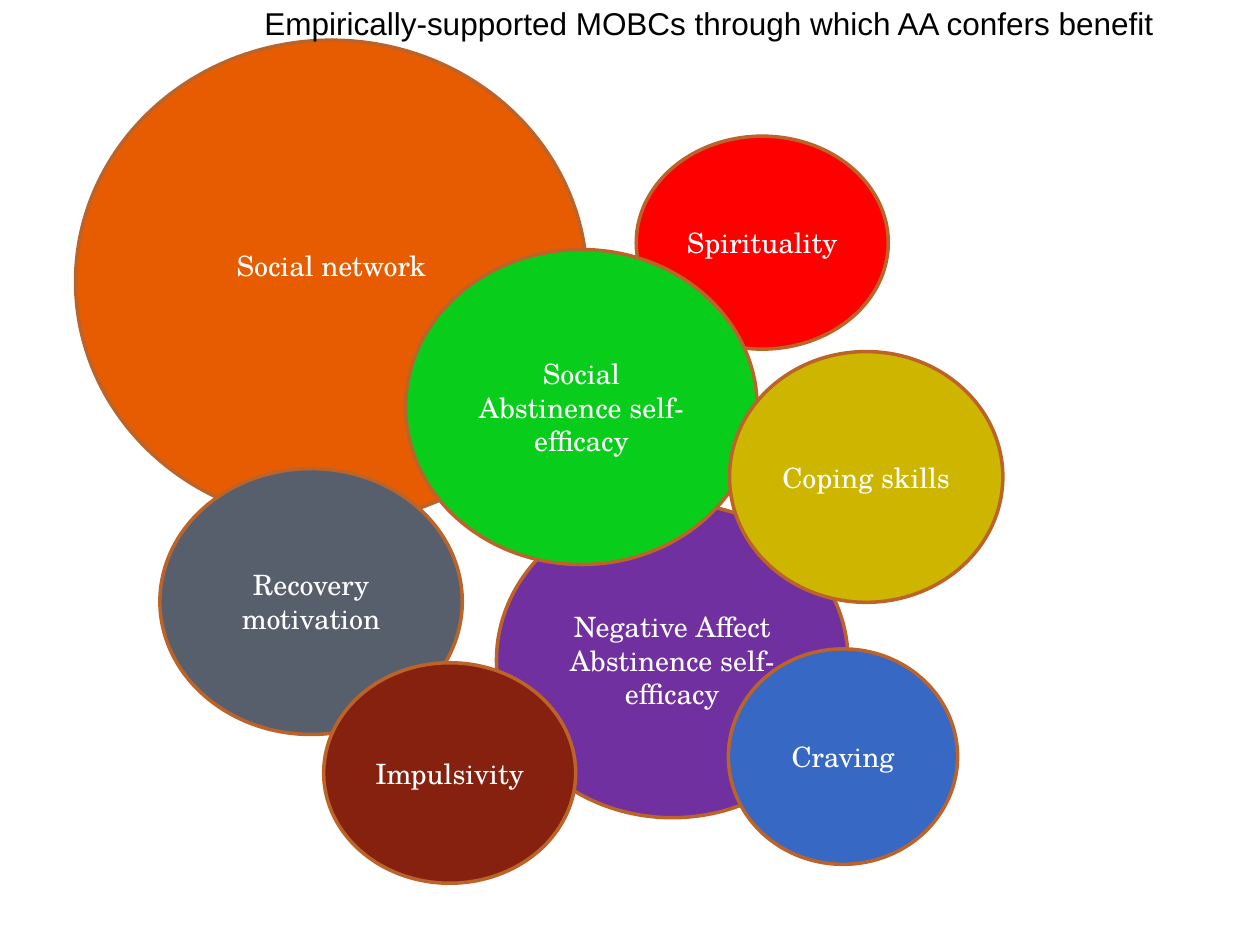
from pptx import Presentation
from pptx.dml.color import RGBColor
from pptx.enum.shapes import MSO_SHAPE as Shape
from pptx.enum.text import MSO_ANCHOR as Anchor, MSO_AUTO_SIZE as AutoSize, PP_ALIGN as Align
from pptx.util import Pt


def color(value):
    return RGBColor.from_string(value)


def write(shape, text, alignment, font_format, font_color):
    paragraph = shape.text_frame.paragraphs[0]
    paragraph.text = text
    paragraph.alignment = alignment
    for name, value in font_format.items():
        setattr(paragraph.font, name, value)
    paragraph.font.color.rgb = color(font_color)


presentation = Presentation()
presentation.slide_width = Pt(720)
presentation.slide_height = Pt(540)
slide = presentation.slides.add_slide(presentation.slide_layouts[6])

bubble_font = {"name": "TeX Gyre Schola", "size": Pt(16)}
title_font = {"name": "Arial", "size": Pt(18)}
bubble_frame = {"word_wrap": True, "vertical_anchor": Anchor.MIDDLE}
title_frame = {"word_wrap": False, "auto_size": AutoSize.SHAPE_TO_FIT_TEXT}

bubbles = [
    ("Negative Affect Abstinence self-efficacy", "7030A0", 283.7, 287.3, 200.9, 180, 3.6),
    ("Social network", "E75C01", 43.2, 23, 292.3, 275.8, 22),
    ("Spirituality", "FF0000", 363.6, 77.8, 144, 121.7, 3.6),
    ("Social Abstinence self-efficacy", "08CE1B", 231.8, 142.6, 200.9, 180, 3.6),
    ("Recovery motivation", "575F6D", 91.4, 267.8, 172.8, 151.9, 3.6),
    ("Impulsivity", "862110", 185, 378.7, 144, 126, 3.6),
    ("Craving", "3668C4", 416.2, 370.8, 131, 123.1, 3.6),
    ("Coping skills", "CEB500", 416.9, 200.9, 156.2, 143.3, 3.6),
]

for text, fill, left, top, width, height, bottom_inset in bubbles:
    bubble = slide.shapes.add_shape(Shape.OVAL, Pt(left), Pt(top), Pt(width), Pt(height))
    bubble.shadow.inherit = False
    bubble.fill.solid()
    bubble.fill.fore_color.rgb = color(fill)
    bubble.line.color.rgb = color("BC6329")
    bubble.line.width = Pt(2)
    for name, value in bubble_frame.items():
        setattr(bubble.text_frame, name, value)
    bubble.text_frame.margin_bottom = Pt(bottom_inset)
    write(bubble, text, Align.CENTER, bubble_font, "FFFFFF")

title = slide.shapes.add_textbox(Pt(144), Pt(-1.4), Pt(527.8), Pt(28.8))
for name, value in title_frame.items():
    setattr(title.text_frame, name, value)
write(title, "Empirically-supported MOBCs through which AA confers benefit", Align.LEFT, title_font, "000000")

presentation.save("out.pptx")
